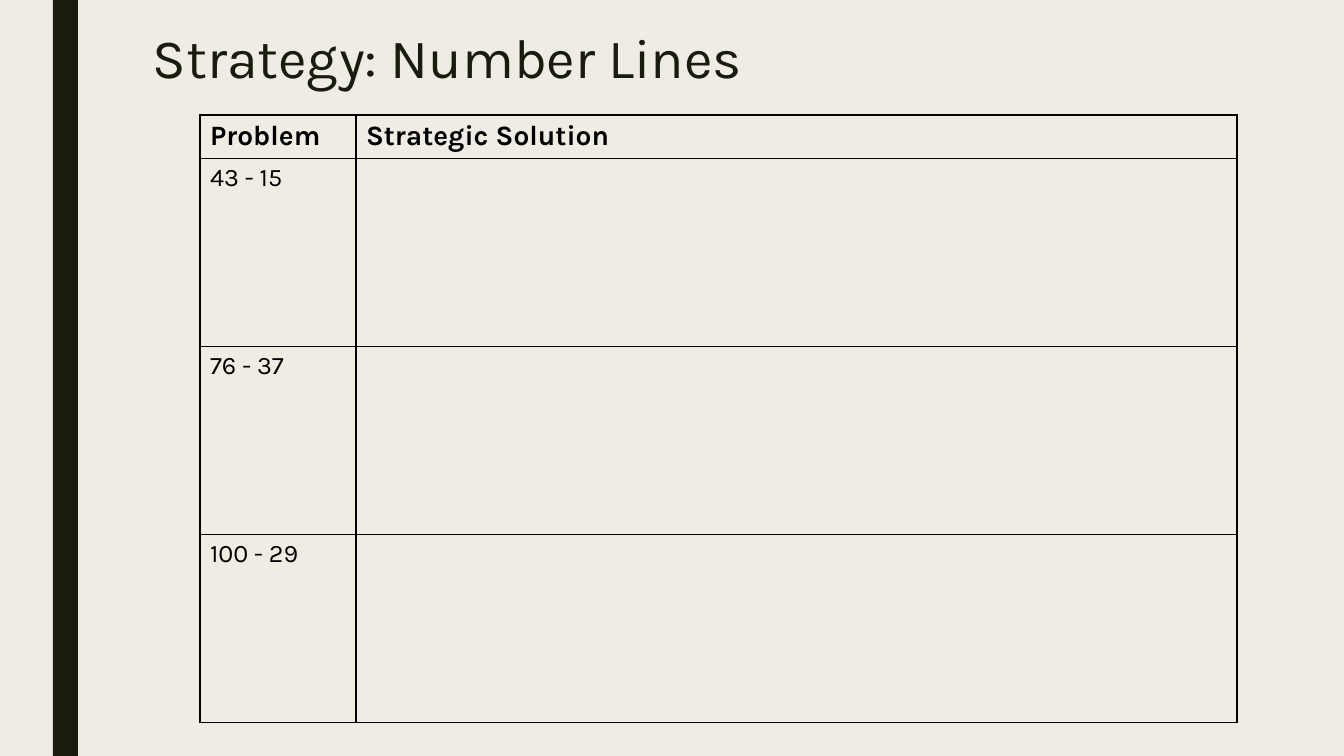
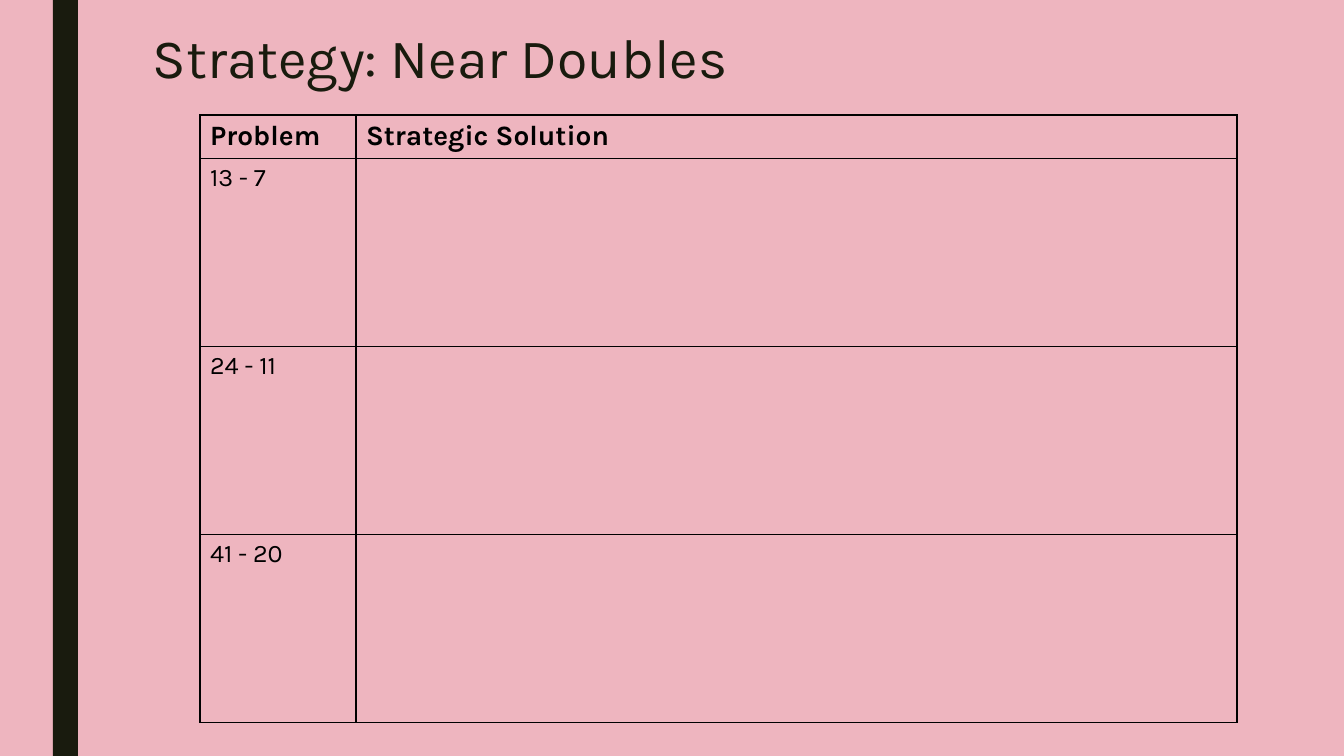
from lxml import etree
from pptx import Presentation
from pptx.dml.color import RGBColor
from pptx.enum.shapes import MSO_SHAPE
from pptx.enum.text import MSO_ANCHOR
from pptx.oxml.ns import qn
from pptx.util import Pt

RECT = MSO_SHAPE.RECTANGLE
MIDDLE = MSO_ANCHOR.MIDDLE

SLIDES = [
    ("Strategy: Number Lines", "cream", ["43 - 15", "76 - 37", "100 - 29"]),
    ("Strategy: Near Doubles", "pink", ["13 - 7", "24 - 11", "41 - 20"]),
]
HEADERS = ["Problem", "Strategic Solution"]

COLORS = {"cream": "EFEDE3", "pink": "EEB5BF", "dark": "191B0E", "black": "000000"}
FONT = "Karla"
EMU_PER_PX = 12192000 / 1344

SLIDE_W, SLIDE_H = 1344, 756
BAND_BOX = (53, 0, 25, SLIDE_H)
TITLE_BOX = (143, 23, 1058, 76)
TABLE_X, TABLE_Y = 200, 115
COL_WIDTHS = [156, 881]
HEADER_H, ROW_H = 43, 188


def px(n):
    return round(n * EMU_PER_PX)


def rgb(name):
    return RGBColor.from_string(COLORS[name])


def style(p, size, color, bold=False):
    p.font.name = FONT
    p.font.size = Pt(size)
    p.font.bold = bold
    p.font.color.rgb = rgb(color)


def add_base(prs, title, background):
    """Add a slide with its background, side band and title."""
    s = prs.slides.add_slide(prs.slide_layouts[6])
    s.background.fill.solid()
    s.background.fill.fore_color.rgb = rgb(background)

    band = s.shapes.add_shape(RECT, *map(px, BAND_BOX))
    band.shadow.inherit = False
    band.fill.solid()
    band.fill.fore_color.rgb = rgb("dark")
    band.line.fill.background()

    tf = s.shapes.add_textbox(*map(px, TITLE_BOX)).text_frame
    tf.word_wrap = True
    tf.vertical_anchor = MIDDLE
    p = tf.paragraphs[0]
    p.text = title
    p.line_spacing = 0.89
    style(p, 39.6, "dark")
    return s


def add_borders(cell):
    tc_pr = cell._tc.get_or_add_tcPr()
    for i, side in enumerate(("lnL", "lnR", "lnT", "lnB")):
        ln = etree.Element(qn(f"a:{side}"), w=str(Pt(1)))
        fill = etree.SubElement(ln, qn("a:solidFill"))
        etree.SubElement(fill, qn("a:srgbClr"), val=COLORS["black"])
        tc_pr.insert(i, ln)


def add_problem_table(s, problems):
    rows = [HEADERS] + [[problem, ""] for problem in problems]
    heights = [HEADER_H] + [ROW_H] * len(problems)
    box = (TABLE_X, TABLE_Y, sum(COL_WIDTHS), sum(heights))
    table = s.shapes.add_table(len(rows), len(HEADERS), *map(px, box)).table
    table.first_row = table.horz_banding = False
    for col, width in zip(table.columns, COL_WIDTHS):
        col.width = px(width)
    for r, (texts, height) in enumerate(zip(rows, heights)):
        table.rows[r].height = px(height)
        for c, text in enumerate(texts):
            cell = table.cell(r, c)
            cell.fill.background()
            add_borders(cell)
            cell.text = text
            is_header = r == 0
            style(cell.text_frame.paragraphs[0], 20 if is_header else 18,
                  "black", is_header)


def main():
    prs = Presentation()
    prs.slide_width, prs.slide_height = px(SLIDE_W), px(SLIDE_H)
    for title, background, problems in SLIDES:
        s = add_base(prs, title, background)
        add_problem_table(s, problems)
    prs.save("out.pptx")


if __name__ == "__main__":
    main()
